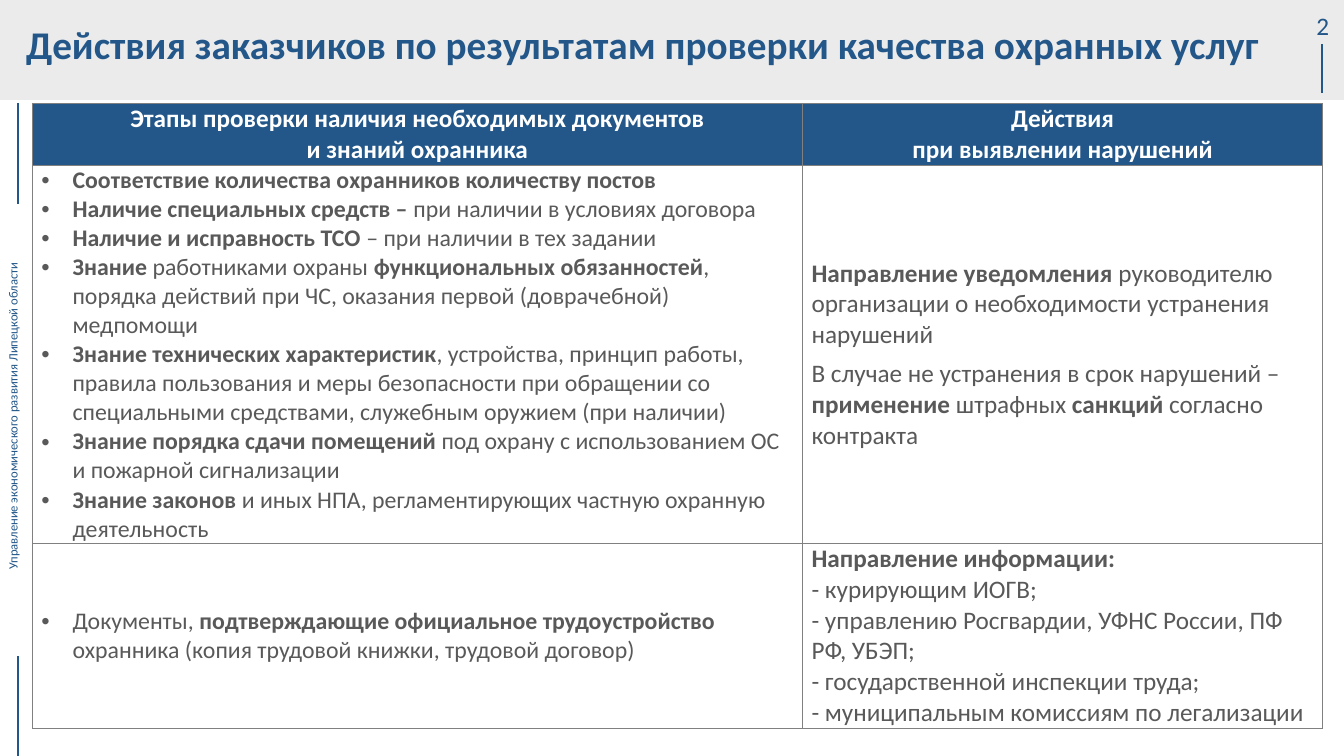
from typing import NamedTuple

from lxml import etree
from pptx import Presentation
from pptx import util as u
from pptx.dml.color import RGBColor
from pptx.enum import shapes, text
from pptx.oxml.ns import qn

FONT = "Calibri"
BLUE, GRAY, WHITE, BORDER = "235789", "595959", "FFFFFF", "808080"
BAND, BAND_ALPHA = "C7C7C7", 35


class Rule(NamedTuple):
    x: float
    top: float
    bottom: float


class CellText(NamedTuple):
    """Cell content; words between asterisks are bold."""
    lines: list[str]
    size: float
    color: str = GRAY
    fill: str | None = None
    centered: bool = False
    bulleted: bool = False
    space_before: float = 0


RULES = [Rule(13.11, 0.44, 0.92), Rule(0.18, 6.51, 7.5), Rule(0.18, 1.02, 2.02)]
COLUMN_WIDTHS = [7.64, 5.16]
ROW_HEIGHTS = [0.61, 3.59, 1.75]

ROWS = [
    [
        CellText(["*Этапы проверки наличия необходимых документов*",
                  "*и знаний охранника*"], 18, WHITE, BLUE, centered=True),
        CellText(["*Действия*", "*при выявлении нарушений*"],
                 18, WHITE, BLUE, centered=True),
    ],
    [
        CellText([
            "*Соответствие количества охранников количеству постов*",
            "*Наличие специальных средств – *при наличии в условиях договора",
            "*Наличие и исправность ТСО *– при наличии в тех задании",
            "*Знание *работниками охраны *функциональных обязанностей*, порядка "
            "действий при ЧС, оказания первой (доврачебной) медпомощи",
            "*Знание технических характеристик*, устройства, принцип работы, "
            "правила пользования и меры безопасности при обращении со "
            "специальными средствами, служебным оружием (при наличии)",
            "*Знание порядка сдачи помещений *под охрану с использованием ОС "
            "и пожарной сигнализации",
            "*Знание законов *и иных НПА, регламентирующих частную охранную "
            "деятельность",
        ], 17, bulleted=True),
        CellText([
            "*Направление уведомления *руководителю организации о необходимости "
            "устранения нарушений",
            "В случае не устранения в срок нарушений – *применение *штрафных "
            "*санкций* согласно контракта",
        ], 18, space_before=6),
    ],
    [
        CellText([
            "Документы, *подтверждающие официальное трудоустройство *охранника "
            "(копия трудовой книжки, трудовой договор)",
        ], 17, bulleted=True),
        CellText([
            "*Направление информации:*",
            "- курирующим ИОГВ;",
            "- управлению Росгвардии, УФНС России, ПФ РФ, УБЭП;",
            "- государственной инспекции труда;",
            "- муниципальным комиссиям по легализации",
        ], 18),
    ],
]


def rgb(value: str) -> RGBColor:
    return RGBColor.from_string(value)


def style_span(span, size: float, color: str, bold: bool = False) -> None:
    span.font.name = FONT
    span.font.size = u.Pt(size)
    span.font.bold = bold
    span.font.color.rgb = rgb(color)


def add_band(page) -> None:
    band = page.shapes.add_shape(shapes.MSO_SHAPE.RECTANGLE, 0, 0,
                                 u.Inches(13.33), u.Inches(0.99))
    band.shadow.inherit = False
    band.fill.solid()
    band.fill.fore_color.rgb = rgb(BAND)
    band.line.fill.background()
    color = band.element.spPr.find(qn("a:solidFill"))[0]
    etree.SubElement(color, qn("a:alpha"), val=str(BAND_ALPHA * 1000))


def add_rule(page, rule: Rule) -> None:
    line = page.shapes.add_connector(
        shapes.MSO_CONNECTOR.STRAIGHT, u.Inches(rule.x), u.Inches(rule.top),
        u.Inches(rule.x), u.Inches(rule.bottom))
    line.line.color.rgb = rgb(BLUE)
    line.line.width = u.Pt(1)
    etree.SubElement(line.element.spPr, qn("a:effectLst"))


def add_label(page, words: str, left: float, top: float, width: float,
              height: float, size: float):
    box = page.shapes.add_textbox(u.Inches(left), u.Inches(top),
                                  u.Inches(width), u.Inches(height))
    box.text_frame.word_wrap = True
    box.text_frame.text = words
    style_span(box.text_frame.paragraphs[0].runs[0], size, BLUE)
    return box


def add_bullet(para) -> None:
    properties = para._p.get_or_add_pPr()
    indent = u.Inches(0.31)
    properties.set("marL", str(indent))
    properties.set("indent", str(-indent))
    etree.SubElement(properties, qn("a:buFont"), typeface="Arial")
    etree.SubElement(properties, qn("a:buChar"), char="•")


def add_borders(cell) -> None:
    properties = cell._tc.get_or_add_tcPr()
    for index, side in enumerate(("lnL", "lnR", "lnT", "lnB")):
        border = etree.Element(qn(f"a:{side}"), w=str(u.Pt(0.75)))
        fill = etree.SubElement(border, qn("a:solidFill"))
        etree.SubElement(fill, qn("a:srgbClr"), val=BORDER)
        properties.insert(index, border)


def fill_cell(cell, content: CellText) -> None:
    cell.margin_left = cell.margin_right = u.Inches(0.09)
    cell.margin_top = cell.margin_bottom = 0
    cell.vertical_anchor = text.MSO_ANCHOR.MIDDLE
    if content.fill:
        cell.fill.solid()
        cell.fill.fore_color.rgb = rgb(content.fill)
    else:
        cell.fill.background()
    add_borders(cell)

    cell.text_frame.text = "\n".join(content.lines)
    for number, para in enumerate(cell.text_frame.paragraphs):
        para.alignment = (text.PP_ALIGN.CENTER if content.centered
                          else text.PP_ALIGN.LEFT)
        if number and content.space_before:
            para.space_before = u.Pt(content.space_before)
        if content.bulleted:
            add_bullet(para)
        para.clear()
        for index, words in enumerate(content.lines[number].split("*")):
            if words:
                span = para.add_run()
                span.text = words
                style_span(span, content.size, content.color, index % 2 == 1)


def add_stage_table(page):
    frame = page.shapes.add_table(
        len(ROWS), len(COLUMN_WIDTHS), u.Inches(0.32), u.Inches(1.03),
        u.Inches(sum(COLUMN_WIDTHS)), u.Inches(sum(ROW_HEIGHTS)))
    table = frame.table
    table.first_row = table.horz_banding = False
    for column, width in zip(table.columns, COLUMN_WIDTHS):
        column.width = u.Inches(width)
    for row, height, contents in zip(table.rows, ROW_HEIGHTS, ROWS):
        row.height = u.Inches(height)
        for cell, content in zip(row.cells, contents):
            fill_cell(cell, content)


def format_title(title) -> None:
    title.left, title.top = u.Inches(0.13), 0
    title.width, title.height = u.Inches(12.84), u.Inches(0.86)
    frame = title.text_frame
    frame.text = "Действия заказчиков по результатам проверки качества охранных услуг"
    frame.auto_size = text.MSO_AUTO_SIZE.NONE
    frame.vertical_anchor = text.MSO_ANCHOR.MIDDLE
    frame.margin_left = frame.margin_right = u.Inches(0.13)
    frame.margin_top = frame.margin_bottom = u.Inches(0.07)
    para = frame.paragraphs[0]
    para.alignment = text.PP_ALIGN.LEFT
    style_span(para.runs[0], 28, BLUE, bold=True)


def main() -> None:
    deck = Presentation()
    deck.slide_width, deck.slide_height = u.Inches(13.33), u.Inches(7.5)
    page = deck.slides.add_slide(deck.slide_layouts[5])

    # Header band, rules and side label
    add_band(page)
    for rule in RULES:
        add_rule(page, rule)
    side = add_label(page, "Управление экономического развития Липецкой области",
                     0, 2.57, 0.35, 3.18, 9)
    side.text_frame.word_wrap = False
    side.text_frame._txBody.bodyPr.set("vert", "vert270")

    # Table of checks and actions
    add_stage_table(page)

    # Page number, then the title on top of the band
    number = add_label(page, "2", 10.17, 0.05, 3.11, 0.4, 18)
    number.text_frame.paragraphs[0].alignment = text.PP_ALIGN.RIGHT
    title = page.shapes.title
    format_title(title)
    number.element.addnext(title.element)

    deck.save("out.pptx")


if __name__ == "__main__":
    main()
